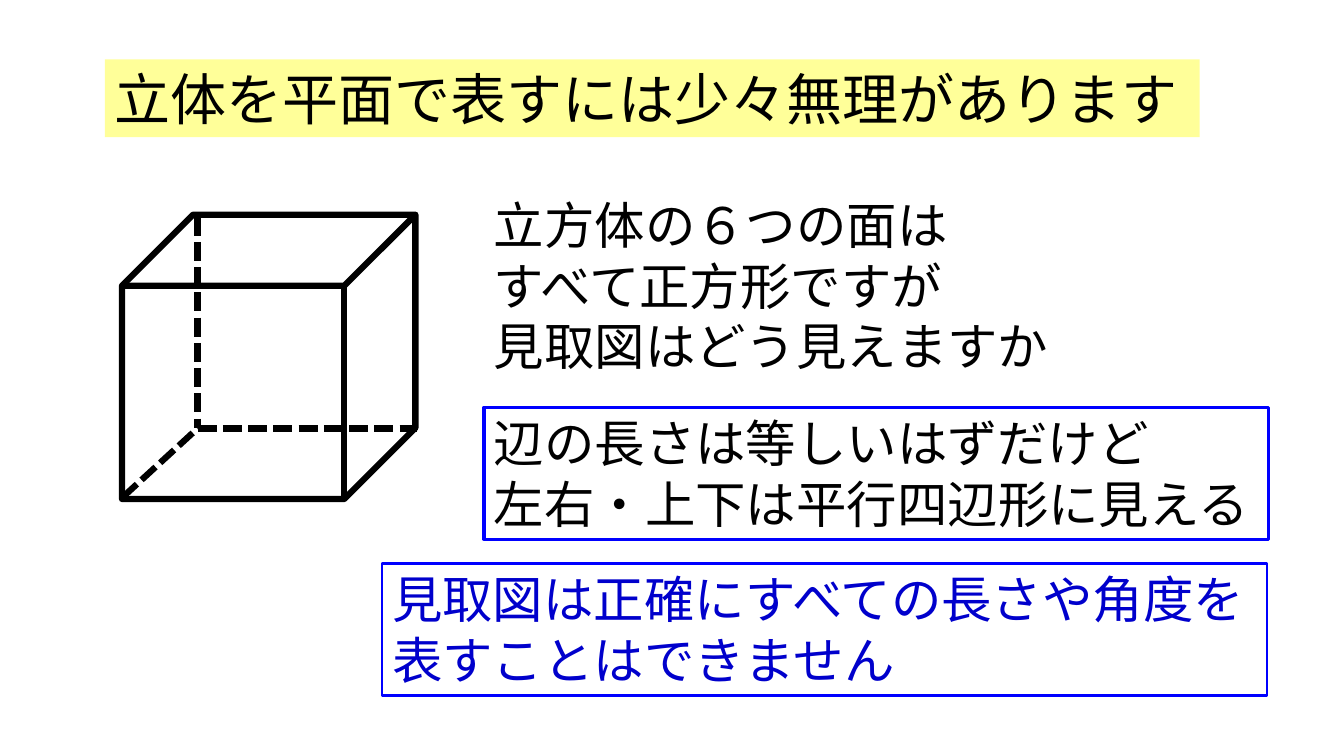
"""Build a slide on the limits of drawing a cube on a flat surface."""
from lxml import etree
from pptx import Presentation
from pptx.dml.color import RGBColor
from pptx.enum.dml import MSO_LINE
from pptx.enum.shapes import MSO_CONNECTOR, MSO_SHAPE
from pptx.enum.text import MSO_ANCHOR, PP_ALIGN
from pptx.oxml.ns import qn
from pptx.util import Inches, Pt

FONT = "Noto Sans CJK JP"
COLORS = {"black": "000000", "yellow": "FFFF99", "frame": "0000FF", "blue": "0000CC"}


def color(name):
    return RGBColor.from_string(COLORS[name])


def write_lines(frame, lines, size, ink):
    frame.word_wrap = True
    frame.vertical_anchor = MSO_ANCHOR.TOP
    for number, line in enumerate(lines):
        paragraph = frame.paragraphs[0] if number == 0 else frame.add_paragraph()
        paragraph.alignment = PP_ALIGN.LEFT
        paragraph.line_spacing = Pt(size * 1.2)
        run = paragraph.add_run()
        run.text = line
        run.font.size = Pt(size)
        run.font.name = FONT
        run.font.color.rgb = color(ink)
        etree.SubElement(run.font._element, qn("a:ea"), typeface=FONT)


deck = Presentation()
deck.slide_width, deck.slide_height = Inches(13.33), Inches(7.5)
slide = deck.slides.add_slide(deck.slide_layouts[6])
shapes = slide.shapes

panels = [
    ((4.8, 4.04, 7.78, 1.31), None, 2.25, 36, "black",
     ["辺の長さは等しいはずだけど", "左右・上下は平行四辺形に見える"]),
    ((1.04, 0.59, 10.86, 0.77), "yellow", None, 40, "black",
     ["立体を平面で表すには少々無理があります"]),
    ((3.79, 5.59, 8.78, 1.31), None, 1.5, 36, "blue",
     ["見取図は正確にすべての長さや角度を", "表すことはできません"]),
]
for place, fill, border, size, ink, lines in panels:
    panel = shapes.add_shape(MSO_SHAPE.RECTANGLE, *map(Inches, place))
    panel.shadow.inherit = False
    if fill:
        panel.fill.solid()
        panel.fill.fore_color.rgb = color(fill)
    else:
        panel.fill.background()
    if border:
        panel.line.color.rgb = color("frame")
        panel.line.width = Pt(border)
    else:
        panel.line.fill.background()
    write_lines(panel.text_frame, lines, size, ink)

question = shapes.add_textbox(Inches(4.8), Inches(1.88), Inches(5.76), Inches(1.92))
write_lines(question.text_frame,
            ["立方体の６つの面は", "すべて正方形ですが", "見取図はどう見えますか"], 36, "black")

cube = shapes.add_shape(MSO_SHAPE.CUBE, Inches(1.21), Inches(2.13), Inches(2.91), Inches(2.82))
cube.shadow.inherit = False
cube.fill.background()
cube.line.color.rgb = color("black")
cube.line.width = Pt(4.5)

hidden_corner = (1.96, 4.25)
hidden_edges = [
    ((1.96, 2.15), hidden_corner),
    ((1.22, 4.93), hidden_corner),
    (hidden_corner, (4.14, 4.25)),
]
for start, end in hidden_edges:
    edge = shapes.add_connector(MSO_CONNECTOR.STRAIGHT, *map(Inches, start + end))
    edge.line.color.rgb = color("black")
    edge.line.width = Pt(4.5)
    edge.line.dash_style = MSO_LINE.SQUARE_DOT
    etree.SubElement(edge._element.spPr, qn("a:effectLst"))

deck.save("out.pptx")
